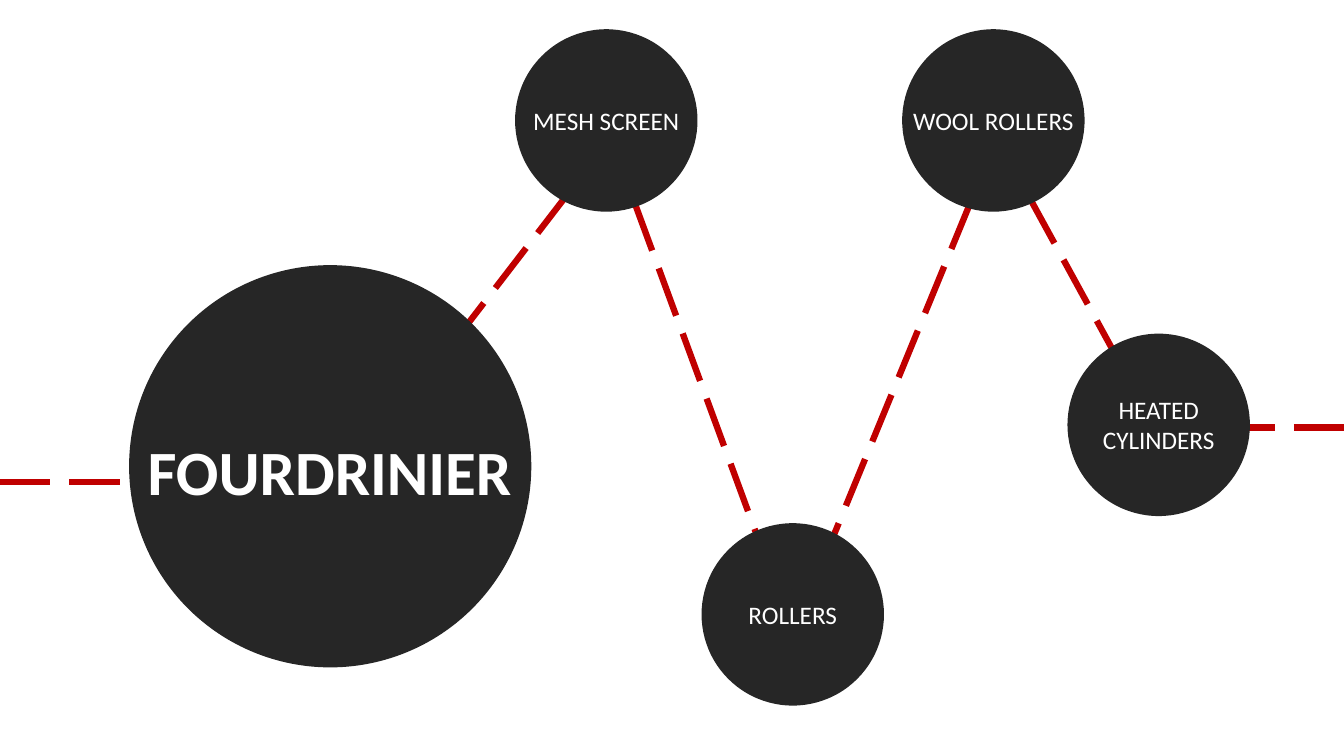
from pptx import Presentation
from pptx.dml.color import RGBColor
from pptx.enum.dml import MSO_LINE
from pptx.enum.shapes import MSO_CONNECTOR, MSO_SHAPE
from pptx.enum.text import MSO_AUTO_SIZE, PP_ALIGN
from pptx.oxml.ns import qn
from pptx.util import Pt
from lxml import etree


def rgb(color):
    return RGBColor.from_string(color)


def add_text(text, left, top, width, height, size=18, bold=False, color="FFFFFF"):
    tf = s.shapes.add_textbox(Pt(left), Pt(top), Pt(width), Pt(height)).text_frame
    tf.word_wrap = True
    tf.auto_size = MSO_AUTO_SIZE.SHAPE_TO_FIT_TEXT
    p = tf.paragraphs[0]
    p.alignment = PP_ALIGN.CENTER
    r = p.add_run()
    r.text = text
    r.font.name = "Calibri"
    r.font.size = Pt(size)
    r.font.bold = bold
    r.font.color.rgb = rgb(color)


prs = Presentation()
prs.slide_width, prs.slide_height = Pt(960), Pt(540)
s = prs.slides.add_slide(prs.slide_layouts[6])

# Dashed route through the machine
mesh, rollers, wool, heated = (436.3, 98.6), (566.6, 452.9), (712.1, 98.6), (825.1, 305.3)
segments = [
    ((0, 344.2), (92.2, 344.2)),
    (mesh, (277.2, 305.3)),
    (mesh, rollers),
    (wool, rollers),
    (wool, heated),
    (heated, (960, 305.3)),
]
for (x1, y1), (x2, y2) in segments:
    line = s.shapes.add_connector(MSO_CONNECTOR.STRAIGHT, Pt(x1), Pt(y1), Pt(x2), Pt(y2))
    line.line.color.rgb = rgb("C00000")
    line.line.width = Pt(4.5)
    line.line.dash_style = MSO_LINE.LONG_DASH
    etree.SubElement(line._element.spPr, qn("a:effectLst"))

# Circles: left, top, diameter
SMALL = 130.3
stages = [
    ("MESH SCREEN", 367.9, 20.9, 28.8),
    ("ROLLERS", 501.1, 373.7, 28.8),
    ("WOOL ROLLERS", 644.4, 20.9, 28.8),
    ("HEATED CYLINDERS", 762.5, 238.3, 51.1),
]
circles = [(92.2, 189.4, 287.3)] + [(left, top, SMALL) for _, left, top, _ in stages]
for left, top, size in circles:
    sp = s.shapes.add_shape(MSO_SHAPE.OVAL, Pt(left), Pt(top), Pt(size), Pt(size))
    sp.shadow.inherit = False
    sp.fill.solid()
    sp.fill.fore_color.rgb = rgb("262626")
    sp.line.fill.background()

# Labels, centred on their circles
add_text("FOURDRINIER", 79.9, 305.3, 311, 61.9, size=45, bold=True)
for label, left, top, height in stages:
    add_text(label, left, top + (SMALL - height) / 2, SMALL, height)

prs.save("out.pptx")
